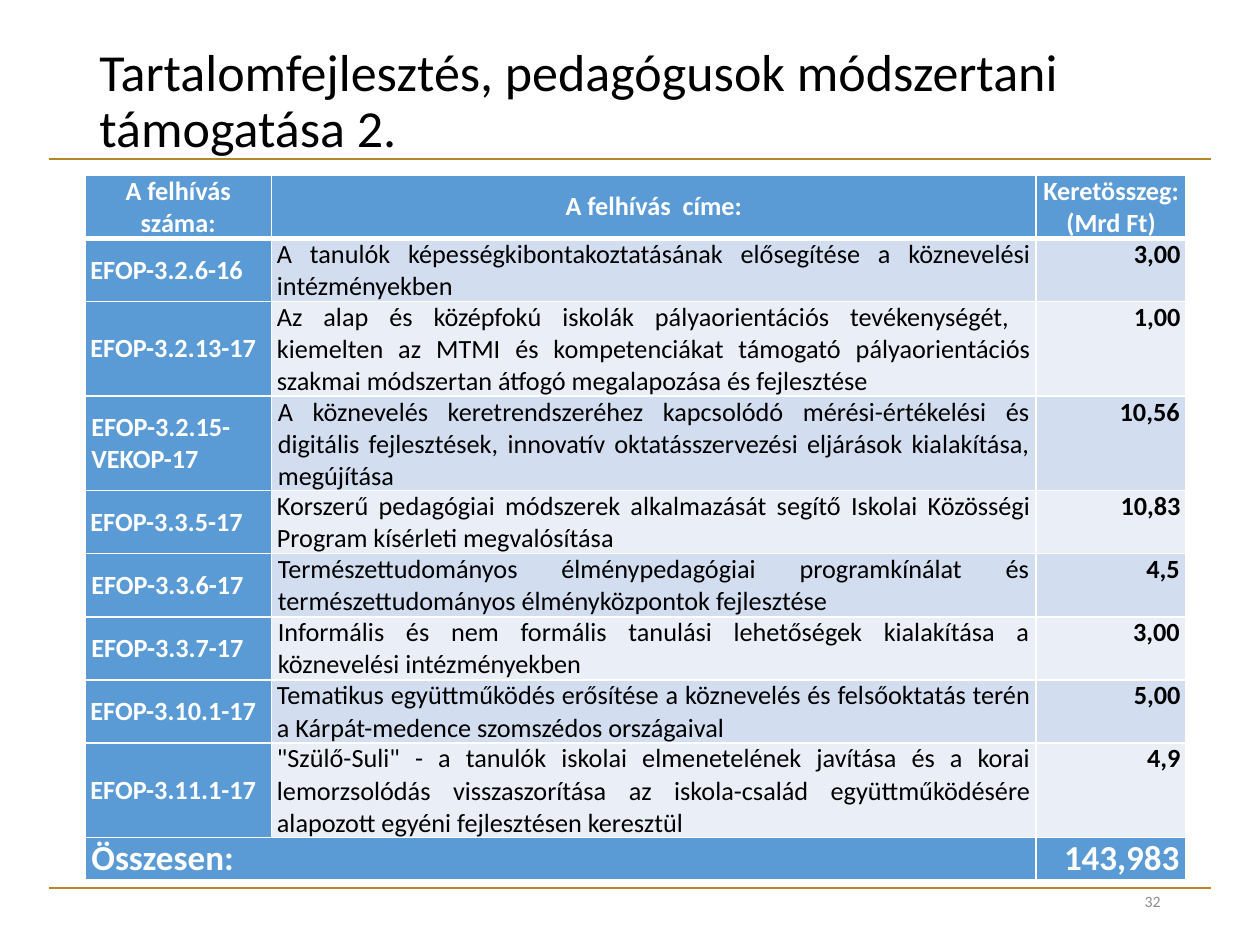
from dataclasses import dataclass

from lxml import etree
from pptx import Presentation
from pptx.dml.color import RGBColor
from pptx.enum.shapes import MSO_CONNECTOR
from pptx.enum.text import MSO_ANCHOR, PP_ALIGN
from pptx.oxml.ns import qn
from pptx.util import Pt

LEFT, CENTER, RIGHT, JUSTIFY = PP_ALIGN.LEFT, PP_ALIGN.CENTER, PP_ALIGN.RIGHT, PP_ALIGN.JUSTIFY
TOP, MIDDLE = MSO_ANCHOR.TOP, MSO_ANCHOR.MIDDLE
STRAIGHT = MSO_CONNECTOR.STRAIGHT
FONT = "Calibri"
WHITE, BLACK, GRAY, GOLD = "FFFFFF", "000000", "8C8C8C", "B78727"
BLUE, BANDS = "5B9BD5", ("D2DEEF", "EAEFF7")
COLUMN_WIDTHS = (106.6, 437, 85.7)
LINE_HEIGHT = 17.28
TOTAL_HEIGHT = 23
NARROW, WIDE = 3.2, 3.7


@dataclass(frozen=True)
class Call:
    number: str
    title: str
    budget: str
    lines: int = 2
    margin: float = NARROW


@dataclass(frozen=True)
class Style:
    size: float = 15
    color: str = WHITE
    bold: bool = True
    align: PP_ALIGN = JUSTIFY
    anchor: MSO_ANCHOR = MIDDLE


HEADERS = ("A felhívás száma:", "A felhívás  címe:", "Keretösszeg:\n(Mrd Ft)")
CALLS = (
    Call("EFOP-3.2.6-16", "A tanulók képességkibontakoztatásának elősegítése a köznevelési intézményekben", "3,00"),
    Call("EFOP-3.2.13-17", "Az alap és középfokú iskolák pályaorientációs tevékenységét,  kiemelten az MTMI és "
         "kompetenciákat támogató pályaorientációs szakmai módszertan átfogó megalapozása és fejlesztése",
         "1,00", lines=3),
    Call("EFOP-3.2.15-VEKOP-17", "A köznevelés keretrendszeréhez kapcsolódó mérési-értékelési és digitális "
         "fejlesztések, innovatív oktatásszervezési eljárások kialakítása, megújítása ",
         "10,56", lines=3, margin=WIDE),
    Call("EFOP-3.3.5-17", "Korszerű pedagógiai módszerek alkalmazását segítő Iskolai Közösségi Program "
         "kísérleti megvalósítása", "10,83"),
    Call("EFOP-3.3.6-17", "Természettudományos élménypedagógiai programkínálat és természettudományos "
         "élményközpontok fejlesztése", "4,5", margin=WIDE),
    Call("EFOP-3.3.7-17", "Informális és nem formális tanulási lehetőségek kialakítása a köznevelési "
         "intézményekben", "3,00", margin=WIDE),
    Call("EFOP-3.10.1-17", "Tematikus együttműködés erősítése a köznevelés és felsőoktatás terén a "
         "Kárpát-medence szomszédos országaival", "5,00"),
    Call("EFOP-3.11.1-17", "\"Szülő-Suli\" - a tanulók iskolai elmenetelének javítása és a korai lemorzsolódás "
         "visszaszorítása az iskola-család együttműködésére alapozott egyéni fejlesztésen keresztül",
         "4,9", lines=3),
)

HEADER_STYLE = Style(align=CENTER)
NUMBER_STYLE = Style()
TITLE_STYLE = Style(color=BLACK, bold=False, anchor=TOP)
BUDGET_STYLE = Style(color=BLACK, align=RIGHT, anchor=TOP)
TOTAL_STYLE = Style(size=20)
TOTAL_BUDGET_STYLE = Style(size=20, align=RIGHT, anchor=TOP)


def rgb(value: str) -> RGBColor:
    return RGBColor.from_string(value)


def write(paragraph, text: str, style: Style) -> None:
    paragraph.text = text
    paragraph.alignment = style.align
    font = paragraph.font
    font.name, font.size, font.bold = FONT, Pt(style.size), style.bold
    font.color.rgb = rgb(style.color)


def add_text(slide, left: float, top: float, width: float, height: float, text: str, style: Style):
    frame = slide.shapes.add_textbox(Pt(left), Pt(top), Pt(width), Pt(height)).text_frame
    frame.word_wrap = True
    frame.vertical_anchor = style.anchor
    write(frame.paragraphs[0], text, style)
    return frame.paragraphs[0]


def add_rule(slide, y: float) -> None:
    rule = slide.shapes.add_connector(STRAIGHT, Pt(28), Pt(y), Pt(692), Pt(y))
    rule.line.color.rgb = rgb(GOLD)
    rule.line.width = Pt(1)
    etree.SubElement(rule._element.spPr, qn("a:effectLst"))


def set_borders(cell, bottom: float) -> None:
    properties = cell._tc.get_or_add_tcPr()
    widths = {"a:lnL": 1, "a:lnR": 1, "a:lnT": 1, "a:lnB": bottom}
    for index, (tag, width) in enumerate(widths.items()):
        border = etree.Element(qn(tag), w=str(int(Pt(width))))
        fill = etree.SubElement(border, qn("a:solidFill"))
        etree.SubElement(fill, qn("a:srgbClr"), val=WHITE)
        properties.insert(index, border)


def fill_cell(cell, text: str, style: Style, fill: str, margin: float = WIDE, bottom: float = 1) -> None:
    cell.fill.solid()
    cell.fill.fore_color.rgb = rgb(fill)
    cell.margin_left = cell.margin_right = Pt(margin)
    cell.margin_top = cell.margin_bottom = Pt(0)
    cell.vertical_anchor = style.anchor
    write(cell.text_frame.paragraphs[0], text, style)
    set_borders(cell, bottom)


def add_calls_table(slide) -> None:
    heights = [2 * LINE_HEIGHT, *(call.lines * LINE_HEIGHT for call in CALLS), TOTAL_HEIGHT]
    table = slide.shapes.add_table(len(heights), len(COLUMN_WIDTHS), Pt(48.5), Pt(100.3),
                                   Pt(sum(COLUMN_WIDTHS)), Pt(sum(heights))).table
    table.first_row = table.horz_banding = False
    for column, width in zip(table.columns, COLUMN_WIDTHS):
        column.width = Pt(width)
    for row, height in zip(table.rows, heights):
        row.height = Pt(height)
    for column, header in enumerate(HEADERS):
        fill_cell(table.cell(0, column), header, HEADER_STYLE, BLUE, bottom=3)
    for row, call in enumerate(CALLS, start=1):
        band = BANDS[(row - 1) % 2]
        fill_cell(table.cell(row, 0), call.number, NUMBER_STYLE, BLUE, call.margin)
        fill_cell(table.cell(row, 1), call.title, TITLE_STYLE, band, call.margin)
        fill_cell(table.cell(row, 2), call.budget, BUDGET_STYLE, band, call.margin)
    last = len(heights) - 1
    table.cell(last, 0).merge(table.cell(last, 1))
    fill_cell(table.cell(last, 0), "Összesen:", TOTAL_STYLE, BLUE)
    fill_cell(table.cell(last, 2), "143,983", TOTAL_BUDGET_STYLE, BLUE)


def main() -> None:
    """Build the slide listing the calls for proposals and their budgets."""
    presentation = Presentation()
    presentation.slide_width, presentation.slide_height = Pt(720), Pt(540)
    slide = presentation.slides.add_slide(presentation.slide_layouts[6])
    for y in (90.7, 507.4):
        add_rule(slide, y)
    title = add_text(slide, 49.7, 28.8, 620.6, 59.8, "Tartalomfejlesztés, pedagógusok módszertani támogatása 2.",
                     Style(29.7, BLACK, False, LEFT))
    title.line_spacing = 0.9
    add_text(slide, 508.3, 500.4, 162, 28.8, "32", Style(9, GRAY, False, RIGHT))
    add_calls_table(slide)
    presentation.save("out.pptx")


if __name__ == "__main__":
    main()
